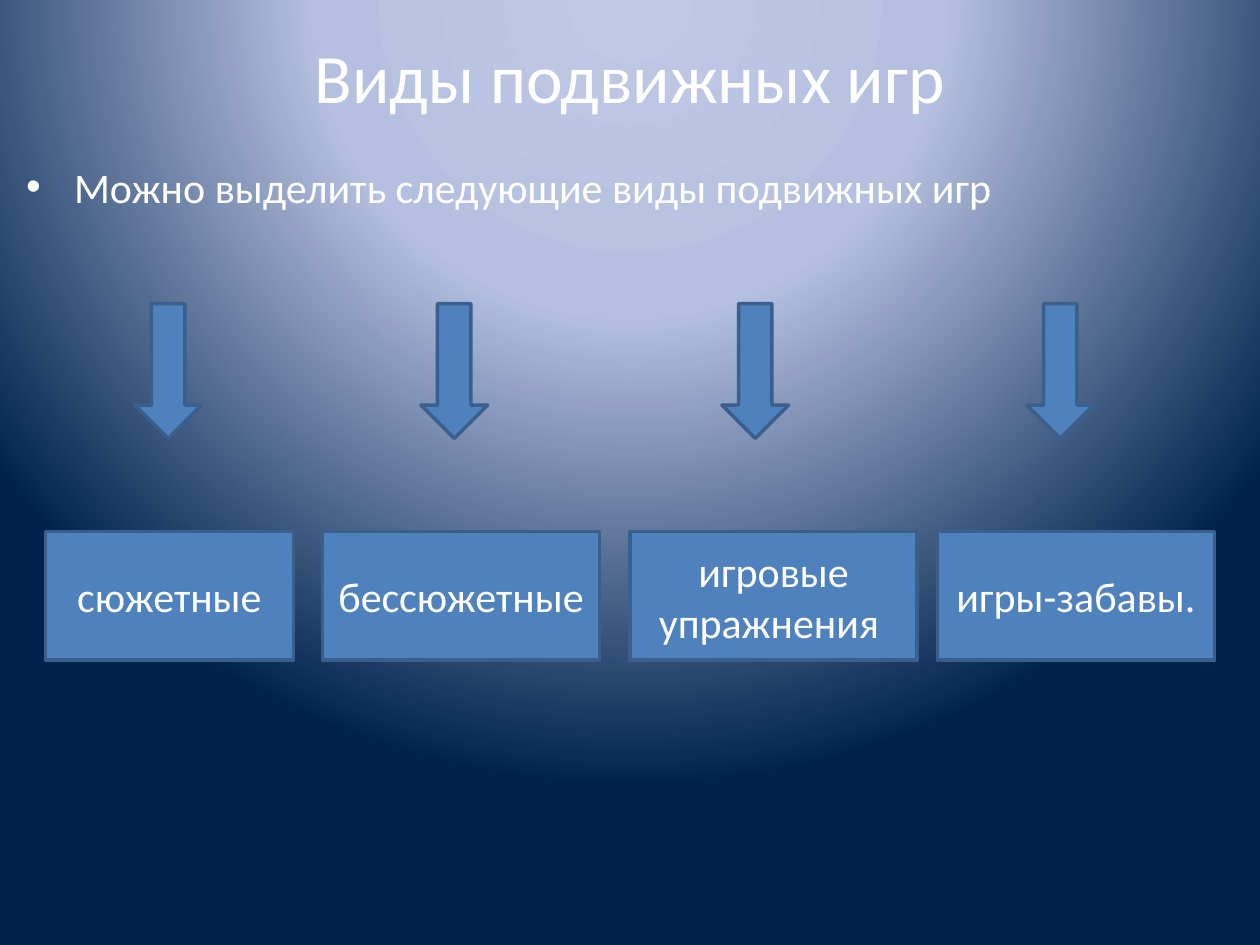
from lxml.etree import SubElement
from pptx import Presentation
from pptx.dml.color import RGBColor
from pptx.enum.shapes import MSO_SHAPE
from pptx.enum.text import MSO_ANCHOR, PP_ALIGN
from pptx.oxml import parse_xml
from pptx.oxml.ns import nsdecls, qn
from pptx.util import Inches, Pt

FONT = "Calibri"
WHITE, BLUE, DARK_BLUE = "FFFFFF", "4F81BD", "3A5F8C"
GLOW_STOPS = [(0, "BFC9E5"), (40, "B5C0E0"), (100, "00234D")]

ARROW_TOP, ARROW_WIDTH, ARROW_HEIGHT = 2.41, 0.53, 1.07
BOX_TOP, BOX_HEIGHT = 4.22, 1.02
# Game type, box left, box width, arrow left
GAME_TYPES = [
    ("сюжетные", 0.36, 1.97, 1.07),
    ("бессюжетные", 2.56, 2.2, 3.34),
    ("игровые упражнения ", 5, 2.28, 5.73),
    ("игры-забавы.", 7.44, 2.2, 8.15),
]


def color(hex_value):
    return RGBColor.from_string(hex_value)


def set_glow_background(slide):
    """Fill the background with a circular gradient centred above the slide."""
    fill = slide.background.fill
    fill.solid()
    stops = "".join(
        f'<a:gs pos="{percent * 1000}"><a:srgbClr val="{hex_value}"/></a:gs>'
        for percent, hex_value in GLOW_STOPS
    )
    gradient = parse_xml(
        f'<a:gradFill {nsdecls("a")} rotWithShape="1"><a:gsLst>{stops}</a:gsLst>'
        '<a:path path="circle"><a:fillToRect l="50000" t="-80000" r="50000" b="180000"/>'
        "</a:path></a:gradFill>"
    )
    solid = next(slide.element.iter(qn("a:solidFill")))
    solid.getparent().replace(solid, gradient)


def write_text(shape, text, size, anchor=MSO_ANCHOR.MIDDLE, align=PP_ALIGN.CENTER):
    frame = shape.text_frame
    frame.word_wrap = True
    frame.vertical_anchor = anchor
    frame.text = text
    paragraph = frame.paragraphs[0]
    paragraph.alignment = align
    font = paragraph.runs[0].font
    font.name, font.size = FONT, Pt(size)
    font.color.rgb = color(WHITE)
    return paragraph


def add_text(slide, text, size, left, top, width, height, **layout):
    box = slide.shapes.add_textbox(
        Inches(left), Inches(top), Inches(width), Inches(height)
    )
    return write_text(box, text, size, **layout)


def add_bullet(paragraph, indent):
    properties = paragraph._p.get_or_add_pPr()
    properties.set("marL", str(Inches(indent)))
    properties.set("indent", str(-Inches(indent)))
    SubElement(properties, qn("a:buFont"), typeface="Arial")
    SubElement(properties, qn("a:buChar"), char="•")


def add_blue_shape(slide, kind, left, top, width, height):
    shape = slide.shapes.add_shape(
        kind, Inches(left), Inches(top), Inches(width), Inches(height)
    )
    shape.shadow.inherit = False
    shape.fill.solid()
    shape.fill.fore_color.rgb = color(BLUE)
    shape.line.color.rgb = color(DARK_BLUE)
    shape.line.width = Pt(2)
    return shape


def main():
    presentation = Presentation()
    presentation.slide_width, presentation.slide_height = Inches(10), Inches(7.5)
    slide = presentation.slides.add_slide(presentation.slide_layouts[6])
    set_glow_background(slide)

    add_text(slide, "Виды подвижных игр", 39.6, 0.5, 0.3, 9, 0.61)
    intro = add_text(
        slide, "Можно выделить следующие виды подвижных игр", 24,
        0.11, 1.23, 9.62, 6.23, anchor=MSO_ANCHOR.TOP, align=PP_ALIGN.LEFT,
    )
    add_bullet(intro, 0.38)

    for _, _, _, arrow_left in GAME_TYPES:
        add_blue_shape(slide, MSO_SHAPE.DOWN_ARROW,
                       arrow_left, ARROW_TOP, ARROW_WIDTH, ARROW_HEIGHT)
    for game_type, box_left, box_width, _ in GAME_TYPES:
        game_box = add_blue_shape(slide, MSO_SHAPE.RECTANGLE,
                                  box_left, BOX_TOP, box_width, BOX_HEIGHT)
        write_text(game_box, game_type, 24)

    presentation.save("out.pptx")


if __name__ == "__main__":
    main()
